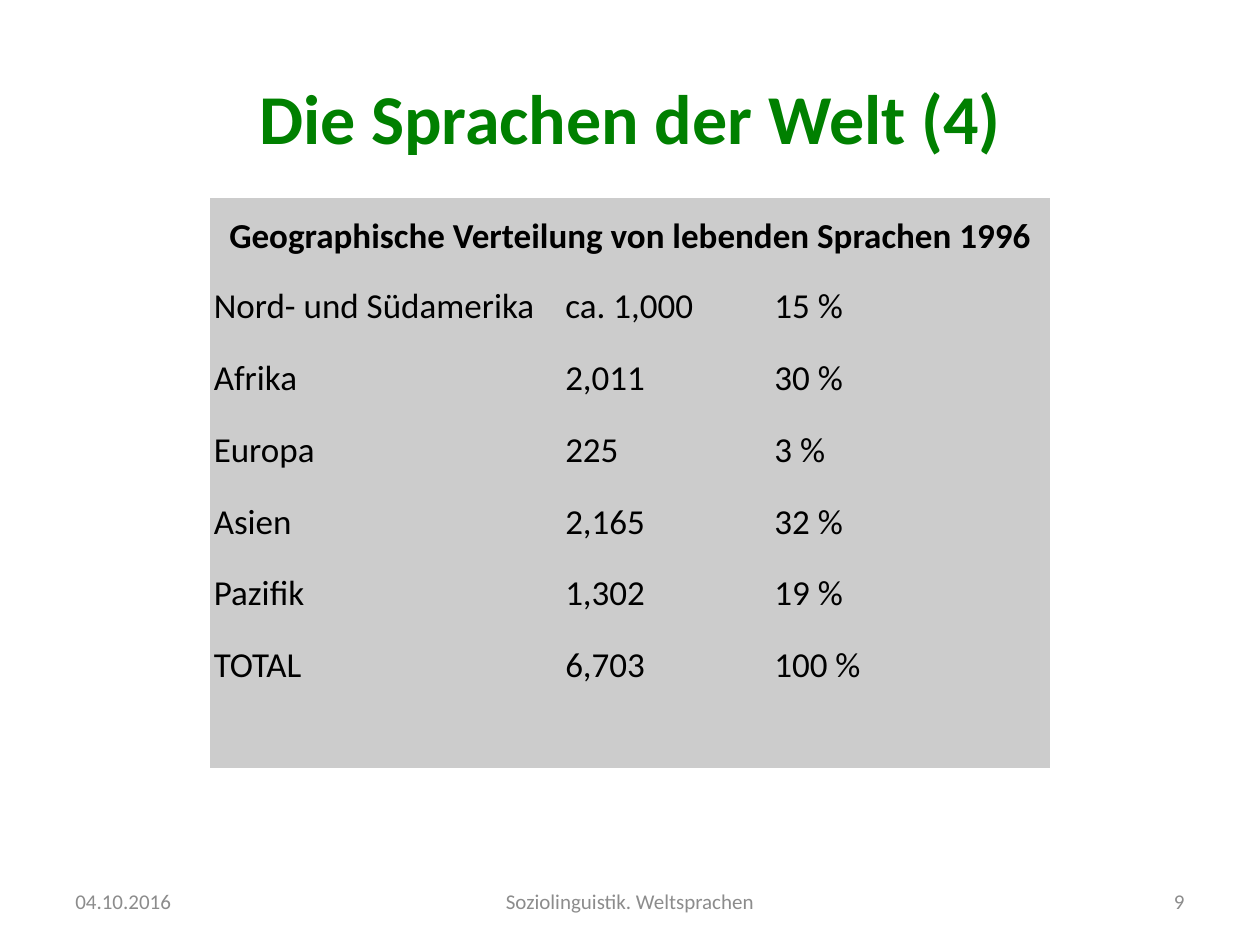
from dataclasses import dataclass

from pptx import Presentation
from pptx.dml.color import RGBColor
from pptx.enum.text import MSO_ANCHOR, PP_ALIGN
from pptx.util import Inches, Pt

LEFT, CENTER, RIGHT = PP_ALIGN.LEFT, PP_ALIGN.CENTER, PP_ALIGN.RIGHT
JUSTIFY = PP_ALIGN.JUSTIFY
MIDDLE = MSO_ANCHOR.MIDDLE

COLORS = {"title": "008000", "footer": "8C8C8C", "text": "000000", "cell": "CCCCCC"}
FONT = "Calibri"
PLAIN_TABLE_STYLE = "{2D5ABB26-0587-4C30-8999-92F81FD0307C}"

PAGE_WIDTH, PAGE_HEIGHT = Inches(10), Inches(7.5)
MARGIN = 0.05
FOOTER_TOP, FOOTER_HEIGHT = 0.93, 0.05
TABLE_LEFT, TABLE_TOP = 1 / 6, 0.21
COLUMN_WIDTHS = (2.79, 1.66, 2.22)
EDGE_ROW, BODY_ROW = 0.55, 0.57
CELL_INSET = Inches(0.03)

HEADING = "Geographische Verteilung von lebenden Sprachen 1996"


@dataclass(frozen=True)
class Region:
    name: str
    languages: str
    share: str


@dataclass(frozen=True)
class Label:
    text: str
    left: float
    width: float
    align: PP_ALIGN


REGIONS = (
    Region("Nord- und Südamerika", "ca. 1,000", "15 %"),
    Region("Afrika", "2,011", "30 %"),
    Region("Europa", "225", "3 %"),
    Region("Asien", "2,165", "32 %"),
    Region("Pazifik", "1,302", "19 %"),
    Region("TOTAL", "6,703", "100 %"),
)

SIDE_WIDTH, MIDDLE_WIDTH = 0.233, 0.317
FOOTERS = (
    Label("04.10.2016", MARGIN, SIDE_WIDTH, LEFT),
    Label("Soziolinguistik. Weltsprachen", (1 - MIDDLE_WIDTH) / 2, MIDDLE_WIDTH, CENTER),
    Label("9", 1 - MARGIN - SIDE_WIDTH, SIDE_WIDTH, RIGHT),
)


def write_text(frame, text: str, *, size: float, color: str, align: PP_ALIGN,
               bold: bool = False, spacing: float = 1.0) -> None:
    para = frame.paragraphs[0]
    para.alignment = align
    para.line_spacing = spacing
    span = para.add_run()
    span.text = text
    span.font.name = FONT
    span.font.size = Pt(size)
    span.font.bold = bold
    span.font.color.rgb = RGBColor.from_string(COLORS[color])


def add_label(page, label: Label, top: float, height: float, *,
              size: float, color: str, bold: bool = False) -> None:
    box = page.shapes.add_textbox(
        round(label.left * PAGE_WIDTH), round(top * PAGE_HEIGHT),
        round(label.width * PAGE_WIDTH), round(height * PAGE_HEIGHT))
    frame = box.text_frame
    frame.word_wrap = True
    frame.vertical_anchor = MIDDLE
    write_text(frame, label.text, size=size, color=color, align=label.align, bold=bold)


def style_cell(cell) -> None:
    cell.fill.solid()
    cell.fill.fore_color.rgb = RGBColor.from_string(COLORS["cell"])
    cell.vertical_anchor = MIDDLE
    cell.margin_left = cell.margin_right = CELL_INSET
    cell.margin_top = cell.margin_bottom = CELL_INSET


def add_language_table(page) -> None:
    row_heights = (EDGE_ROW, *[BODY_ROW] * len(REGIONS), EDGE_ROW)
    frame = page.shapes.add_table(
        len(row_heights), len(COLUMN_WIDTHS),
        round(TABLE_LEFT * PAGE_WIDTH), round(TABLE_TOP * PAGE_HEIGHT),
        Inches(sum(COLUMN_WIDTHS)), Inches(sum(row_heights)))
    table = frame.table
    table.first_row = table.horz_banding = False
    table._tbl.tblPr.find("{*}tableStyleId").text = PLAIN_TABLE_STYLE

    for column, width in zip(table.columns, COLUMN_WIDTHS):
        column.width = Inches(width)
    for row, height in zip(table.rows, row_heights):
        row.height = Inches(height)
    for cell in table.iter_cells():
        style_cell(cell)

    last_column, last_row = len(COLUMN_WIDTHS) - 1, len(row_heights) - 1
    for row in (0, last_row):
        table.cell(row, 0).merge(table.cell(row, last_column))

    write_text(table.cell(0, 0).text_frame, HEADING, size=20, color="text",
               align=CENTER, bold=True, spacing=1.15)
    for row, region in enumerate(REGIONS, start=1):
        for column, text in enumerate((region.name, region.languages, region.share)):
            write_text(table.cell(row, column).text_frame, text, size=20,
                       color="text", align=JUSTIFY, spacing=1.15)


def main() -> None:
    deck = Presentation()
    deck.slide_width, deck.slide_height = PAGE_WIDTH, PAGE_HEIGHT
    page = deck.slides.add_slide(deck.slide_layouts[6])

    title = Label("Die Sprachen der Welt (4)", MARGIN, 1 - 2 * MARGIN, CENTER)
    add_label(page, title, 0.04, 1 / 6, size=40, color="title", bold=True)
    for footer in FOOTERS:
        add_label(page, footer, FOOTER_TOP - 0.003, FOOTER_HEIGHT + 0.003,
                  size=12, color="footer")
    add_language_table(page)

    deck.save("out.pptx")


if __name__ == "__main__":
    main()
